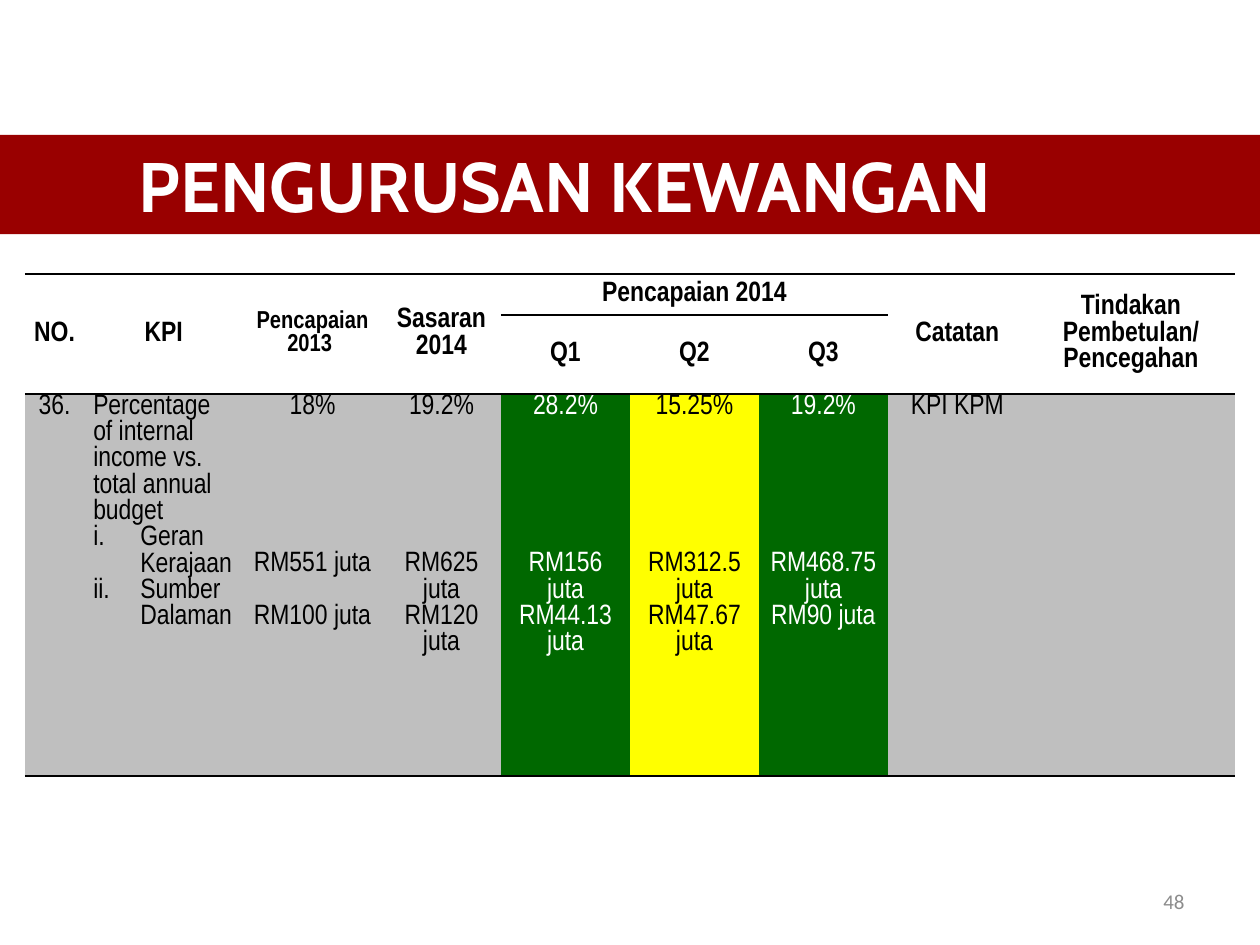
from lxml.etree import SubElement
from pptx import Presentation
from pptx.dml.color import RGBColor
from pptx.enum.text import MSO_ANCHOR, MSO_AUTO_SIZE, PP_ALIGN
from pptx.oxml.ns import qn
from pptx.util import Cm, Pt

COLORS = {
    "banner": "990000", "white": "FFFFFF", "black": "000000", "number": "8C8C8C",
    "gray": "BFBFBF", "green": "006800", "yellow": "FFFF00",
}
NO_STYLE = "{2D5ABB26-0587-4C30-8999-92F81FD0307C}"
COLUMNS = [1.2, 3.2, 2.8, 2.4, 2.6, 2.6, 2.6, 2.8, 4.2]
ROWS = [0.83, 1.58, 7.7]
HEADINGS = ["NO.", "KPI", "Pencapaian 2013 ", "Sasaran 2014", "Pencapaian 2014",
            None, None, "Catatan", "Tindakan Pembetulan/ Pencegahan"]
QUARTERS = ["Q1", "Q2", "Q3"]
FIRST_QUARTER = 4
LINE = 15
RESULTS = [
    ("gray", [("36.", 0)]),
    ("gray", [("Percentage of internal income vs. total annual budget", 0),
              ("Geran Kerajaan", 0), ("Sumber Dalaman", 0)]),
    ("gray", [("18%", 0), ("RM551 juta", 5), ("RM100 juta", 1)]),
    ("gray", [("19.2%", 0), ("RM625 juta", 5), ("RM120 juta", 0)]),
    ("green", [("28.2%", 0), ("RM156 juta RM44.13 juta", 5)]),
    ("yellow", [("15.25%", 0), ("RM312.5 juta", 5), ("RM47.67 juta", 0)]),
    ("green", [("19.2%", 0), ("RM468.75 juta", 5), ("RM90 juta", 0)]),
    ("gray", [("KPI KPM", 0)]),
    ("gray", []),
]


def color(name):
    """Return the palette colour with this name."""
    return RGBColor.from_string(COLORS[name])


def set_font(para, name, size, shade, bold=False):
    """Format a whole paragraph."""
    font = para.font
    font.name, font.size, font.bold = name, Pt(size), bold
    font.color.rgb = color(shade)


def add_rule(cell, *sides):
    """Draw thin black rules on the given sides of a cell, top before bottom."""
    for side in sides:
        line = SubElement(cell._tc.get_or_add_tcPr(), qn(f"a:ln{side}"), w=str(Pt(1)))
        fill = SubElement(line, qn("a:solidFill"))
        SubElement(fill, qn("a:srgbClr"), val=COLORS["black"])


def set_margins(cell, side):
    """Set equal side margins and no vertical margins."""
    cell.margin_left = cell.margin_right = Cm(side)
    cell.margin_top = cell.margin_bottom = 0


def number_roman(para):
    """Give a paragraph hanging lower-case roman numbering."""
    props = para._p.get_or_add_pPr()
    props.set("marL", str(Cm(0.95)))
    props.set("indent", str(Cm(-0.95)))
    SubElement(props, qn("a:buFont"), typeface="+mj-lt")
    SubElement(props, qn("a:buAutoNum"), type="romanLcPeriod")
    tabs = SubElement(props, qn("a:tabLst"))
    SubElement(tabs, qn("a:tab"), pos=str(Cm(1.27)), algn="l")


def fill_heading(cell, text, size=16):
    """Write one bold, centred heading cell."""
    set_margins(cell, 0.1)
    cell.vertical_anchor = MSO_ANCHOR.MIDDLE
    cell.text = text
    para = cell.text_frame.paragraphs[0]
    para.alignment = PP_ALIGN.CENTER
    set_font(para, "Arial Narrow", size, "black", True)


def fill_result(cell, fill, lines, is_list):
    """Write one result cell, with gaps counted in text lines."""
    add_rule(cell, "T", "B")
    cell.fill.solid()
    cell.fill.fore_color.rgb = color(fill)
    set_margins(cell, 0.2 if fill != "gray" else 0.18)
    frame = cell.text_frame
    for index, (text, gap) in enumerate(lines):
        para = frame.add_paragraph() if index else frame.paragraphs[0]
        para.text = text
        para.alignment = PP_ALIGN.LEFT if is_list else PP_ALIGN.CENTER
        if gap:
            para.space_before = Pt(gap * LINE)
        if is_list and index:
            number_roman(para)
        set_font(para, "Arial Narrow", 16, "white" if fill == "green" else "black")


def add_banner(page, left, top, width, height):
    """Place the title as a full-width band."""
    title = page.shapes.title
    title.left, title.top, title.width, title.height = map(Cm, (left, top, width, height))
    title.fill.solid()
    title.fill.fore_color.rgb = color("banner")
    frame = title.text_frame
    frame.auto_size = MSO_AUTO_SIZE.NONE
    frame.vertical_anchor = MSO_ANCHOR.MIDDLE
    frame.margin_left = Cm(2.8)
    frame.text = "PENGURUSAN KEWANGAN"
    frame.paragraphs[0].alignment = PP_ALIGN.LEFT
    set_font(frame.paragraphs[0], "Cabin", 40, "white", True)


def add_kpi_table(page, left, top):
    """Place the indicator table with its two-level header."""
    table = page.shapes.add_table(len(ROWS), len(COLUMNS), Cm(left), Cm(top),
                                  Cm(sum(COLUMNS)), Cm(sum(ROWS))).table
    table.first_row = table.horz_banding = False
    table._tbl.tblPr.find(qn("a:tableStyleId")).text = NO_STYLE
    for column, width in zip(table.columns, COLUMNS):
        column.width = Cm(width)
    for row, height in zip(table.rows, ROWS):
        row.height = Cm(height)

    last_quarter = FIRST_QUARTER + len(QUARTERS) - 1
    for index, heading in enumerate(HEADINGS):
        upper, lower = table.cell(0, index), table.cell(1, index)
        in_quarters = FIRST_QUARTER <= index <= last_quarter
        add_rule(upper, *("TB" if in_quarters else "T"))
        add_rule(lower, *("TB" if in_quarters else "B"))
        upper.fill.background()
        lower.fill.background()
        if in_quarters:
            fill_heading(lower, QUARTERS[index - FIRST_QUARTER])
        else:
            upper.merge(lower)
        if heading:
            fill_heading(upper, heading, 14 if index == 2 else 16)
    table.cell(0, FIRST_QUARTER).merge(table.cell(0, last_quarter))

    for index, (fill, lines) in enumerate(RESULTS):
        fill_result(table.cell(2, index), fill, lines, HEADINGS[index] == "KPI")


def add_page_number(page, left, top, width, height):
    """Place the page number at the lower right."""
    box = page.shapes.add_textbox(*map(Cm, (left, top, width, height)))
    frame = box.text_frame
    frame.word_wrap = True
    frame.vertical_anchor = MSO_ANCHOR.MIDDLE
    para = frame.paragraphs[0]
    para.text = "48"
    para.alignment = PP_ALIGN.RIGHT
    set_font(para, "Calibri", 12, "number")


def main():
    """Build the slide."""
    deck = Presentation()
    deck.slide_width, deck.slide_height = Cm(25.4), Cm(19.05)
    page = deck.slides.add_slide(deck.slide_layouts[5])
    add_banner(page, 0, 2.72, 25.4, 2)
    add_kpi_table(page, 0.5, 5.52)
    add_page_number(page, 18.2, 17.65, 5.93, 1.02)
    deck.save("out.pptx")


if __name__ == "__main__":
    main()
